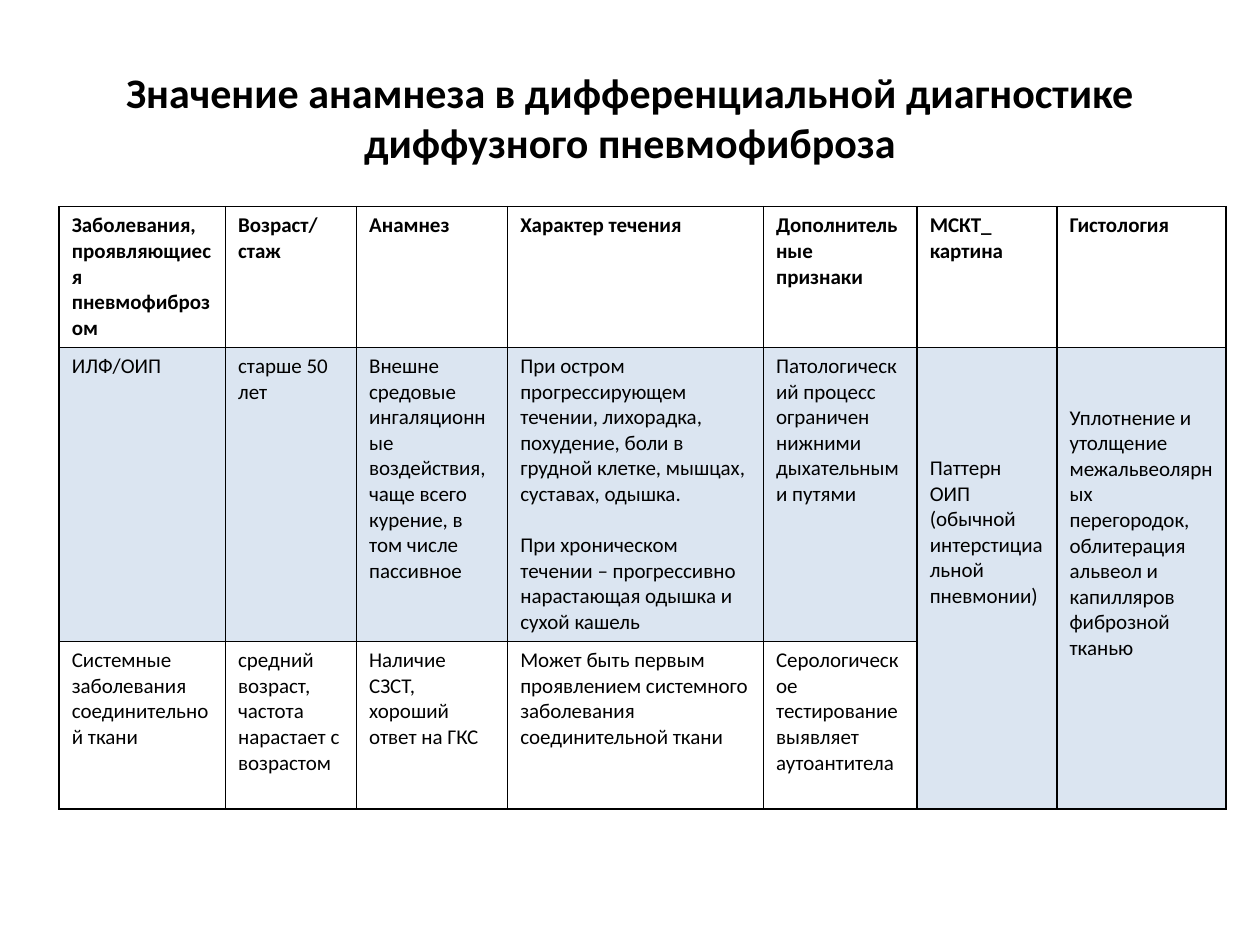
from dataclasses import dataclass

from lxml import etree
from pptx import Presentation
from pptx.dml.color import RGBColor
from pptx.enum.text import MSO_ANCHOR, PP_ALIGN
from pptx.oxml.ns import qn
from pptx.table import _Cell
from pptx.text.text import TextFrame
from pptx.util import Inches, Pt


@dataclass(frozen=True)
class Theme:
    font: str = "Calibri"
    ink: str = "000000"
    accent: str = "4F81BD"
    accent_opacity: int = 20
    title_size: int = 24
    body_size: int = 12
    border_width: float = 1
    paragraph_gap: float = 14.6


@dataclass(frozen=True)
class Entry:
    paragraphs: tuple[str, ...]
    bold: bool = False
    shaded: bool = False
    rows: int = 1
    top_margin: float = 0.05


THEME = Theme()
TITLE = "Значение анамнеза в дифференциальной диагностике диффузного пневмофиброза"
COLUMN_WIDTHS = (1.32, 1.04, 1.2, 2.03, 1.22, 1.11, 1.34)
ROW_HEIGHTS = (1.11, 2.33, 1.33)

HEADINGS = [
    Entry((heading,), bold=True)
    for heading in (
        "Заболевания, проявляющиеся пневмофиброзом",
        "Возраст/стаж",
        "Анамнез",
        "Характер течения",
        "Дополнительные признаки",
        "МСКТ_ картина",
        "Гистология",
    )
]
FIBROSIS = [
    Entry(("ИЛФ/ОИП",), shaded=True),
    Entry(("старше 50 лет",), shaded=True),
    Entry(("Внешне средовые ингаляционные воздействия, чаще всего курение, "
           "в том числе пассивное",), shaded=True),
    Entry(("При остром прогрессирующем течении, лихорадка, похудение, боли "
           "в грудной клетке, мышцах, суставах, одышка.",
           "При хроническом течении – прогрессивно нарастающая одышка "
           "и сухой кашель"), shaded=True),
    Entry(("Патологический процесс ограничен нижними дыхательными путями",),
          shaded=True),
    Entry(("Паттерн ОИП (обычной интерстициальной пневмонии)",),
          shaded=True, rows=2, top_margin=0.86),
    Entry(("Уплотнение и утолщение межальвеолярных перегородок, облитерация "
           "альвеол и капилляров фиброзной тканью",),
          shaded=True, rows=2, top_margin=0.46),
]
CONNECTIVE_TISSUE = [
    Entry((text,))
    for text in (
        "Системные заболевания соединительной ткани",
        "средний возраст, частота нарастает с возрастом",
        "Наличие СЗСТ, хороший ответ на ГКС",
        "Может быть первым проявлением системного заболевания соединительной ткани",
        "Серологическое тестирование выявляет аутоантитела",
    )
]
ROWS = (HEADINGS, FIBROSIS, CONNECTIVE_TISSUE)


def write_text(frame: TextFrame, *paragraphs: str, size: float = THEME.body_size,
               bold: bool = False, align: PP_ALIGN = PP_ALIGN.LEFT,
               gap: float = 0) -> None:
    """Fill the frame; gap is the space in points between paragraphs."""
    frame.word_wrap = True
    for index, text in enumerate(paragraphs):
        paragraph = frame.add_paragraph() if index else frame.paragraphs[0]
        paragraph.alignment = align
        if index:
            paragraph.space_before = Pt(gap)
        run = paragraph.add_run()
        run.text = text
        run.font.name = THEME.font
        run.font.size = Pt(size)
        run.font.bold = bold
        run.font.color.rgb = RGBColor.from_string(THEME.ink)


def draw_borders(cell: _Cell) -> None:
    properties = cell._tc.get_or_add_tcPr()
    for index, side in enumerate(("lnL", "lnR", "lnT", "lnB")):
        line = etree.Element(qn(f"a:{side}"), w=str(Pt(THEME.border_width)))
        fill = etree.SubElement(line, qn("a:solidFill"))
        etree.SubElement(fill, qn("a:srgbClr"), val=THEME.ink)
        properties.insert(index, line)


def shade(cell: _Cell) -> None:
    cell.fill.solid()
    cell.fill.fore_color.rgb = RGBColor.from_string(THEME.accent)
    color = cell._tc.tcPr.find(f"{qn('a:solidFill')}/{qn('a:srgbClr')}")
    etree.SubElement(color, qn("a:alpha"), val=str(THEME.accent_opacity * 1000))


def add_diagnosis_table(slide) -> None:
    table = slide.shapes.add_table(
        len(ROW_HEIGHTS), len(COLUMN_WIDTHS), Inches(0.47), Inches(1.64),
        Inches(sum(COLUMN_WIDTHS)), Inches(sum(ROW_HEIGHTS)),
    ).table
    table.first_row = table.horz_banding = False
    for column, width in zip(table.columns, COLUMN_WIDTHS):
        column.width = Inches(width)
    for row, height in zip(table.rows, ROW_HEIGHTS):
        row.height = Inches(height)
    for cell in table.iter_cells():
        cell.fill.background()
        draw_borders(cell)

    for row_index, entries in enumerate(ROWS):
        for column_index, entry in enumerate(entries):
            cell = table.cell(row_index, column_index)
            last_row = row_index + entry.rows - 1
            if entry.rows > 1:
                cell.merge(table.cell(last_row, column_index))
            if entry.shaded:
                for covered in range(row_index, last_row + 1):
                    shade(table.cell(covered, column_index))
            cell.margin_top = Inches(entry.top_margin)
            write_text(cell.text_frame, *entry.paragraphs, bold=entry.bold,
                       gap=THEME.paragraph_gap)


def main() -> None:
    presentation = Presentation()
    presentation.slide_width, presentation.slide_height = Inches(10), Inches(7.5)
    slide = presentation.slides.add_slide(presentation.slide_layouts[5])
    title = slide.shapes.title
    title.left, title.top = Inches(0.5), Inches(0.3)
    title.width, title.height = Inches(9), Inches(1.25)
    title.text_frame.vertical_anchor = MSO_ANCHOR.MIDDLE
    write_text(title.text_frame, TITLE, size=THEME.title_size, bold=True,
               align=PP_ALIGN.CENTER)
    add_diagnosis_table(slide)
    presentation.save("out.pptx")


if __name__ == "__main__":
    main()
